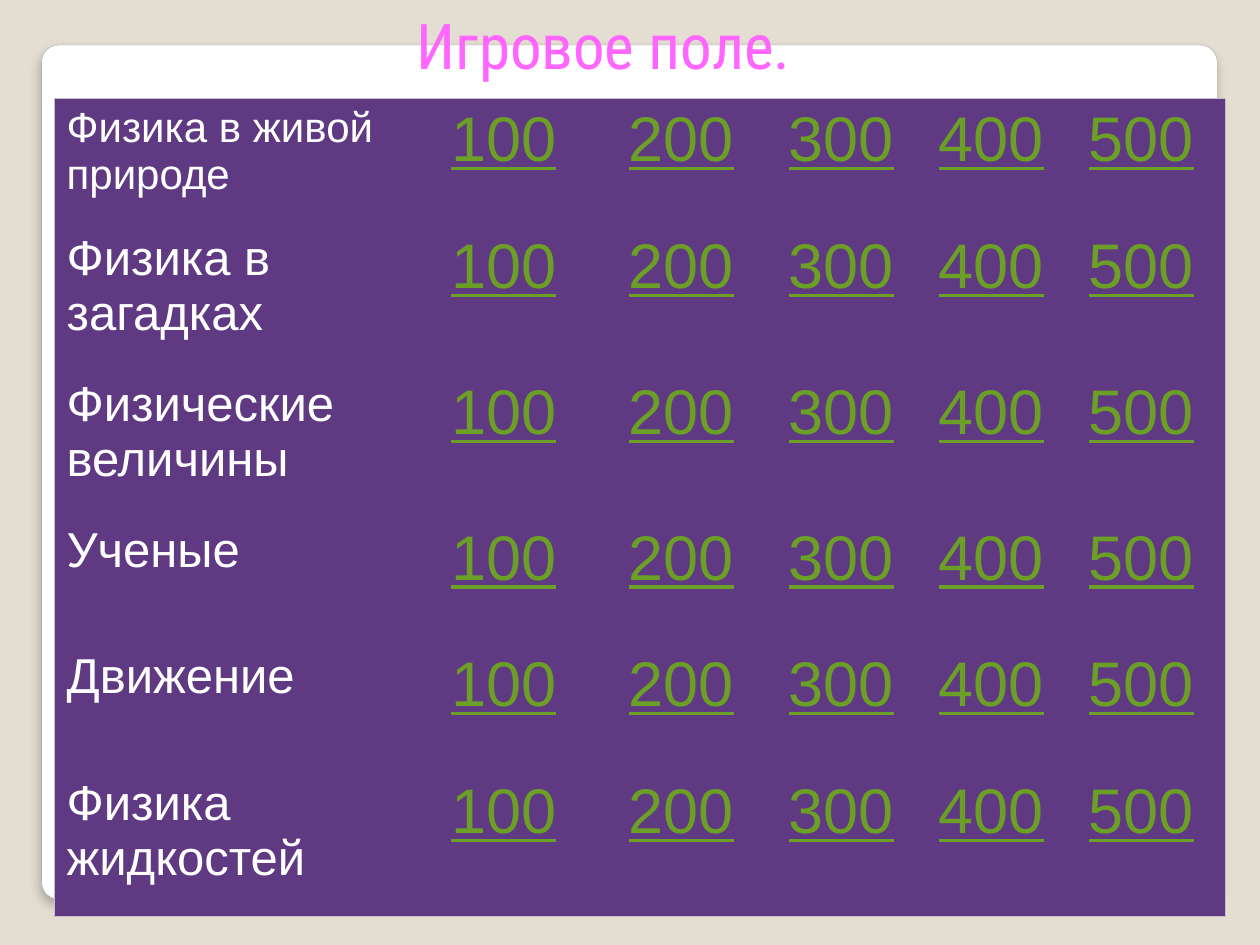
from lxml import etree
from pptx import Presentation
from pptx.dml.color import RGBColor
from pptx.enum.shapes import MSO_SHAPE
from pptx.enum.text import PP_ALIGN
from pptx.oxml import parse_xml
from pptx.oxml.ns import qn
from pptx.util import Cm, Pt

ROUNDED = MSO_SHAPE.ROUNDED_RECTANGLE
CENTER = PP_ALIGN.CENTER
A_NS = "http://schemas.openxmlformats.org/drawingml/2006/main"

# Topic and its text size
TOPICS = [
    ("Физика в живой природе", 24),
    ("Физика в загадках", 28),
    ("Физические величины", 28),
    ("Ученые", 28),
    ("Движение", 28),
    ("Физика жидкостей", 28),
]
POINTS = ["100", "200", "300", "400", "500"]
COL_WIDTHS = [7.75, 3.58, 3.23, 3.02, 3.02, 3.02]
ROW_HEIGHTS = [2.56, 2.94, 2.94, 2.55, 2.56, 2.94]


def rgb(value):
    return RGBColor.from_string(value)


def style_text(p, text, size, color, font):
    p.text = text
    p.font.size = Pt(size)
    p.font.name = font
    p.font.color.rgb = rgb(color)


def set_borders(cell, outer_sides):
    """Draw a thin line on the outer sides and none on the others."""
    tcPr = cell._tc.get_or_add_tcPr()
    for side in "LRTB":
        ln = etree.SubElement(tcPr, qn(f"a:ln{side}"), w=str(Pt(0.75)))
        if side in outer_sides:
            fill = etree.SubElement(ln, qn("a:solidFill"))
            etree.SubElement(fill, qn("a:srgbClr"), val="C5BFCC")
        else:
            etree.SubElement(ln, qn("a:noFill"))


def add_card(s, left, top, width, height):
    card = s.shapes.add_shape(ROUNDED, Cm(left), Cm(top), Cm(width), Cm(height))
    card.adjustments[0] = 0.02
    card.fill.solid()
    card.fill.fore_color.rgb = rgb("FFFFFF")
    card.line.color.rgb = rgb("A4A4A4")
    card.line.width = Pt(0.16)
    # Soft shadow below the card
    card._element.spPr.append(parse_xml(
        f'<a:effectLst xmlns:a="{A_NS}">'
        f'<a:outerShdw blurRad="{Pt(6)}" dist="{Pt(4)}" dir="5400000" rotWithShape="0">'
        '<a:srgbClr val="000000"><a:alpha val="25000"/></a:srgbClr>'
        '</a:outerShdw></a:effectLst>'))


def add_board(s, left, top):
    rows, cols = len(ROW_HEIGHTS), len(COL_WIDTHS)
    frame = s.shapes.add_table(rows, cols, Cm(left), Cm(top),
                               Cm(sum(COL_WIDTHS)), Cm(sum(ROW_HEIGHTS)))
    table = frame.table
    table.first_row = False
    table.horz_banding = False
    for column, width in zip(table.columns, COL_WIDTHS):
        column.width = Cm(width)
    for i, (topic, size) in enumerate(TOPICS):
        table.rows[i].height = Cm(ROW_HEIGHTS[i])
        for j, text in enumerate([topic] + POINTS):
            cell = table.cell(i, j)
            edges = {"L": j == 0, "R": j == cols - 1, "T": i == 0, "B": i == rows - 1}
            set_borders(cell, [side for side, outer in edges.items() if outer])
            cell.fill.solid()
            cell.fill.fore_color.rgb = rgb("5F3A82")
            p = cell.text_frame.paragraphs[0]
            if j == 0:
                style_text(p, text, size, "FFFFFF", "Arial")
            else:
                style_text(p, text, 36, "6B9F25", "Arial")
                p.font.underline = True


def add_title(s, left, top, width, height):
    box = s.shapes.add_textbox(Cm(left), Cm(top), Cm(width), Cm(height))
    tf = box.text_frame
    tf.word_wrap = True
    p = tf.paragraphs[0]
    style_text(p, "Игровое поле.", 36, "FF66FF", "Roboto Condensed")
    p.alignment = CENTER


def main():
    prs = Presentation()
    prs.slide_width, prs.slide_height = Cm(25.4), Cm(19.05)
    s = prs.slides.add_slide(prs.slide_layouts[6])
    s.background.fill.solid()
    s.background.fill.fore_color.rgb = rgb("E3DED1")

    add_card(s, 0.84, 0.91, 23.7, 17.22)
    add_board(s, 1.09, 1.98)
    add_title(s, 5.77, 0, 12.8, 1.57)

    prs.save("out.pptx")


if __name__ == "__main__":
    main()
